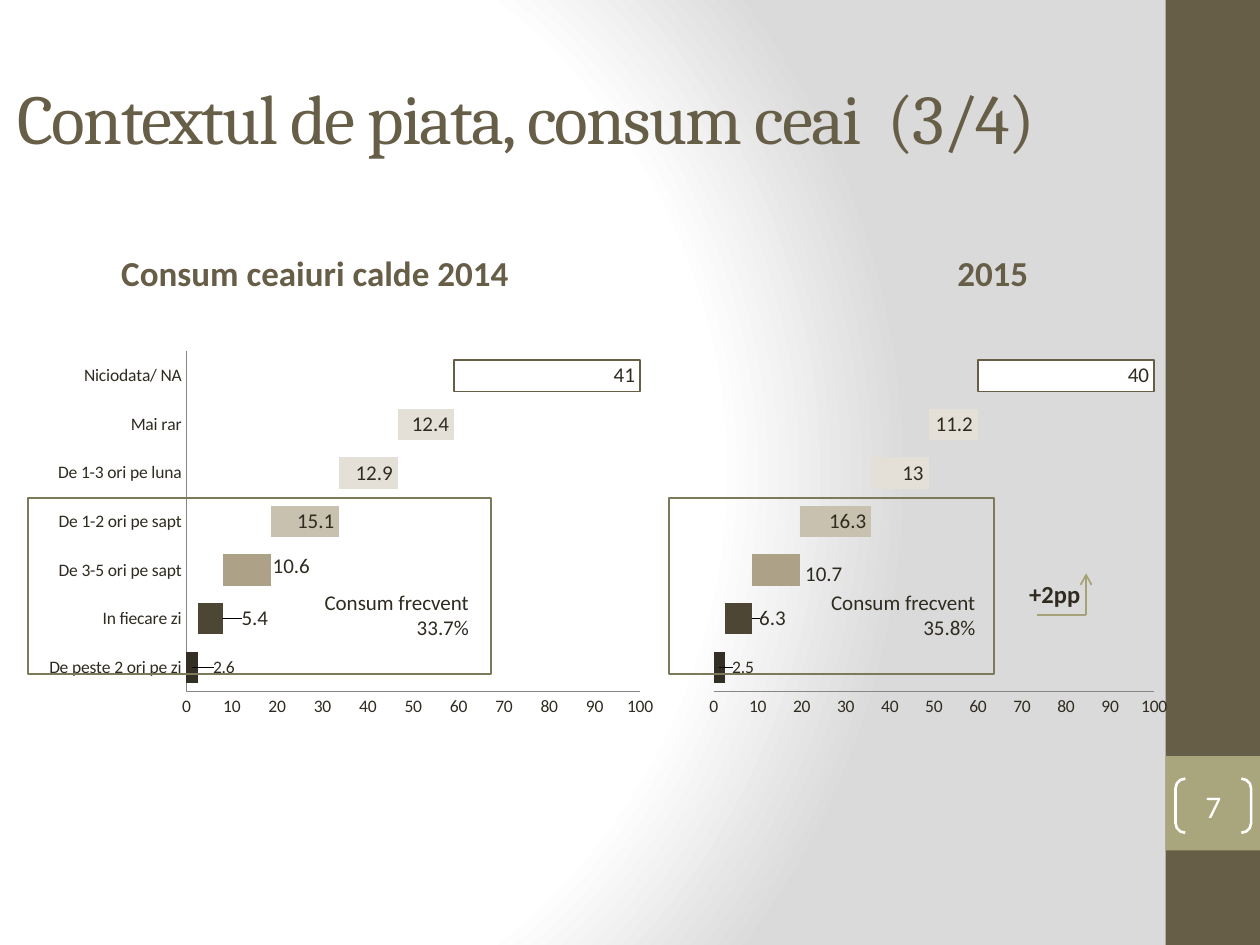
import pptx
import pptx.util
import pptx.chart.data
import pptx.dml.color
import pptx.enum.chart
import pptx.enum.shapes
import pptx.enum.text
import pptx.oxml
import pptx.oxml.ns

HUES = {
    "brown": "675E47", "sage": "A9A57C", "ink": "2F2B20", "frame": "7D7A5C",
    "arrow": "A6A278", "white": "FFFFFF", "gray": "DADADA", "axis": "878787",
    "peak": "342F24", "daily": "4D4635", "often": "ADA288", "week": "C8C1AF",
    "rare": "E4E0D7",
}
NS = pptx.oxml.ns.nsdecls("a", "c")
QN = pptx.oxml.ns.qn
ALIGN = pptx.enum.text.PP_ALIGN
ANCHOR = pptx.enum.text.MSO_ANCHOR
SHAPE = pptx.enum.shapes.MSO_SHAPE
CHART = pptx.enum.chart


def rgb(name):
    return pptx.dml.color.RGBColor.from_string(HUES[name])


class Deck:
    """Style and current slide; lengths are cells of a 100 x 75 grid."""
    cols, rows = 100, 75

    def __init__(self):
        self.prs = pptx.Presentation()
        self.prs.slide_width = pptx.util.Inches(10)
        self.prs.slide_height = pptx.util.Inches(7.5)
        self.slide = self.prs.slides.add_slide(self.prs.slide_layouts[6])
        self.shapes = self.slide.shapes

    def box(self, left, top, *size):
        wide, high = self.prs.slide_width, self.prs.slide_height
        steps = (wide / self.cols, high / self.rows) * 2
        return [round(n * s) for n, s in zip((left, top, *size), steps)]

    def glow(self):
        """Circular gradient background."""
        self.slide.background.fill.gradient()
        old = self.slide.element.find(".//" + QN("a:gradFill"))
        stops = "".join(
            f'<a:gs pos="{pos}000"><a:srgbClr val="{HUES[hue]}"/></a:gs>'
            for pos, hue in ((0, "white"), (75, "white"), (100, "gray")))
        new = pptx.oxml.parse_xml(
            f'<a:gradFill {NS} rotWithShape="1"><a:gsLst>{stops}</a:gsLst>'
            '<a:path path="circle"><a:fillToRect l="20000" t="50000" '
            'r="100000" b="50000"/></a:path></a:gradFill>')
        old.getparent().replace(old, new)

    def shape(self, at, fill=None, line=None, width=1, kind=SHAPE.RECTANGLE):
        item = self.shapes.add_shape(kind, *self.box(*at))
        item.shadow.inherit = False
        if fill:
            item.fill.solid()
            item.fill.fore_color.rgb = rgb(fill)
        else:
            item.fill.background()
        if line:
            item.line.color.rgb = rgb(line)
            item.line.width = pptx.util.Pt(width)
        else:
            item.line.fill.background()
        return item

    def put(self, frame, text, size, hue="ink", face="Calibri", bold=False,
            align=ALIGN.LEFT, anchor=ANCHOR.TOP, track=None):
        frame.text = text
        frame.word_wrap = True
        frame.vertical_anchor = anchor
        for para in frame.paragraphs:
            para.alignment = align
            for run in para.runs:
                self.font(run.font, size, hue, face, bold)
                if track:
                    run.font._element.set("spc", str(track))

    def font(self, font, size, hue="ink", face="Calibri", bold=False):
        font.size = pptx.util.Pt(size)
        font.name = face
        font.bold = bold
        font.color.rgb = rgb(hue)

    def text(self, at, text, size, **style):
        item = self.shapes.add_textbox(*self.box(*at))
        self.put(item.text_frame, text, size, **style)

    def line(self, start, end, hue, head=False):
        item = self.shapes.add_connector(
            pptx.enum.shapes.MSO_CONNECTOR.STRAIGHT,
            *self.box(*start), *self.box(*end))
        item.line.color.rgb = rgb(hue)
        item.line.width = pptx.util.Pt(1)
        if head:
            item.line._get_or_add_ln().append(
                pptx.oxml.parse_xml(f'<a:tailEnd {NS} type="arrow"/>'))
        item._element.spPr.append(
            pptx.oxml.parse_xml(f"<a:effectLst {NS}/>"))

    def layout(self, inner, **parts):
        """Manual chart layout; parts are shares of the chart's size."""
        tags = "".join(f'<c:{k} val="{v}"/>' for k, v in parts.items())
        return pptx.oxml.parse_xml(
            f"<c:layout {NS}><c:manualLayout>{inner}{tags}"
            "</c:manualLayout></c:layout>")

    def fall(self, at, cats, base, vals, plot, shifts, named):
        """Waterfall: stacked bars over an unfilled base."""
        data = pptx.chart.data.CategoryChartData()
        data.categories = cats
        data.add_series("Series 1", base)
        data.add_series("Series 2", vals)
        chart = self.shapes.add_chart(
            CHART.XL_CHART_TYPE.BAR_STACKED, *self.box(*at), data).chart
        chart.has_legend = chart.has_title = False
        self.font(chart.font, 10)
        bars = chart.plots[0]
        bars.gap_width, bars.overlap = 55, 100
        bars.vary_by_categories = False

        # Plot area
        area = chart._chartSpace.find(".//" + QN("c:plotArea"))
        for old in area.findall(QN("c:layout")):
            area.remove(old)
        area.insert(0, self.layout(
            '<c:layoutTarget val="inner"/><c:xMode val="edge"/>'
            '<c:yMode val="edge"/>', **dict(zip("xywh", plot))))

        # Axes
        for axis in (chart.category_axis, chart.value_axis):
            axis.has_major_gridlines = False
            axis.major_tick_mark = CHART.XL_TICK_MARK.NONE
            axis.minor_tick_mark = CHART.XL_TICK_MARK.NONE
            axis.format.line.color.rgb = rgb("axis")
        chart.category_axis.visible = named
        scale = chart.value_axis
        scale.minimum_scale, scale.maximum_scale = 0, 100
        scale.major_unit = 10

        # Bars and their labels
        hidden, steps = bars.series
        hidden.format.fill.background()
        hidden.data_labels.show_value = False
        steps.format.fill.solid()
        steps.format.fill.fore_color.rgb = rgb("sage")
        labels = steps.data_labels
        labels.show_value = True
        labels.position = CHART.XL_LABEL_POSITION.INSIDE_END
        self.font(labels.font, 12)
        hues = ("peak", "daily", "often", "week", "rare", "rare", "white")
        for n, hue in enumerate(hues):
            point = (steps if n else hidden).points[n]
            point.format.fill.solid()
            point.format.fill.fore_color.rgb = rgb(hue)
        point.format.line.color.rgb = rgb("brown")
        point.format.line.width = pptx.util.Pt(0.75)

        for n, (x, y) in enumerate(shifts):
            row = steps if n else hidden
            label = row.points[n].data_label
            if n:
                self.font(label.font, 12)
                label.position = CHART.XL_LABEL_POSITION.INSIDE_END
            else:
                label.position = CHART.XL_LABEL_POSITION.CENTER
            for node in row._element.iter(QN("c:dLbl")):
                if node.find(QN("c:idx")).get("val") == str(n):
                    node.insert(1, self.layout("", x=x, y=y))


def main():
    deck = Deck()
    deck.glow()

    # Side band and page number
    deck.shape((92.5, 0, 7.5, 75), "brown")
    deck.shape((92.5, 60, 7.5, 7.5), "sage")
    page = deck.shape((93.3, 61.8, 6, 4.3), None, "white", 1.5,
                      SHAPE.DOUBLE_BRACKET)
    page.adjustments[0] = 0.18
    frame = page.text_frame
    frame.margin_left = frame.margin_right = 0
    frame.margin_top = frame.margin_bottom = 0
    deck.put(frame, "7", 18, hue="white", align=ALIGN.CENTER,
             anchor=ANCHOR.MIDDLE)

    # Title and headings
    deck.text((0.4, 3, 92.9, 12.5), "Contextul de piata, consum ceai  (3/4)",
              40, hue="brown", face="Cambria", anchor=ANCHOR.MIDDLE, track=-100)
    for left, wide, text in ((5, 40, "Consum ceaiuri calde 2014"),
                             (62.6, 32.4, "2015")):
        deck.text((left, 16.8, wide, 7), text, 20, hue="brown", bold=True,
                  align=ALIGN.CENTER, anchor=ANCHOR.BOTTOM)

    # Charts
    cats = ("De peste 2 ori pe zi", "In fiecare zi", "De 3-5 ori pe sapt",
            "De 1-2 ori pe sapt", "De 1-3 ori pe luna", "Mai rar",
            "Niciodata/ NA")
    deck.fall((2.8, 27.3, 50, 30), cats,
              (2.6, 2.6, 8, 18.6, 33.7, 46.6, 59),
              (None, 5.4, 10.6, 15.1, 12.9, 12.4, 41),
              (0.24, 0.02, 0.72, 0.9),
              ((0.05, 0), (0.08, 0), (0.07, -0.01)), True)
    deck.fall((55.5, 27.3, 38, 30), [str(n) for n in range(1, 8)],
              (2.5, 2.5, 8.8, 19.5, 35.8, 48.8, 60),
              (None, 6.3, 10.7, 16.3, 13, 11.2, 40),
              (0.03, 0.02, 0.92, 0.9),
              ((0.05, 0), (0.08, 0), (0.1, 0.01)), False)

    # Frequent use frames
    for left, wide, note, share in ((2.2, 36.8, 24, "33.7%"),
                                    (53.1, 25.8, 64.2, "35.8%")):
        deck.shape((left, 39.5, wide, 14), None, "frame")
        deck.text((note, 46.3, 14.2, 7.1), "Consum frecvent\n" + share, 12,
                  align=ALIGN.RIGHT)

    # Growth mark
    deck.text((80.7, 45.5, 7.1, 3.4), "+2pp", 14, bold=True)
    deck.line((82.3, 48.8), (86.2, 48.8), "arrow")
    deck.line((86.2, 48.8), (86.2, 45.5), "arrow", head=True)

    deck.prs.save("out.pptx")


if __name__ == "__main__":
    main()
